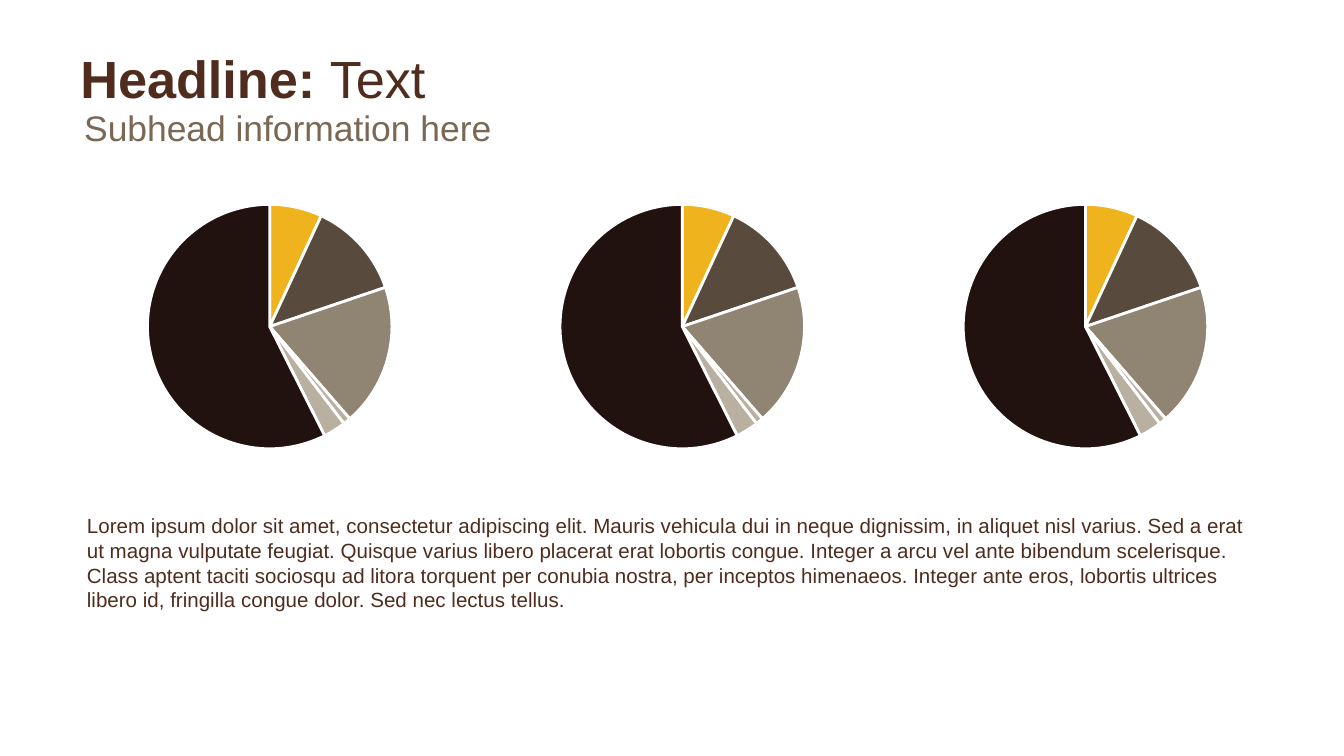
from lxml.etree import SubElement
from pptx import Presentation
from pptx.chart.data import CategoryChartData
from pptx.dml.color import RGBColor
from pptx.enum.chart import XL_CHART_TYPE
from pptx.enum.text import MSO_ANCHOR
from pptx.oxml.ns import qn
from pptx.util import Pt

COLORS = {
    "brown": "4F2C1D", "taupe": "7A6855", "white": "FFFFFF", "black": "000000",
    "gold": "EFB31D", "umber": "584B3D", "stone": "908472", "sand": "B9B0A1",
    "espresso": "21120F",
}


def rgb(name):
    return RGBColor.from_string(COLORS[name])


def add_text(left, top, width, height, runs, size, color, anchor=MSO_ANCHOR.TOP):
    frame = slide.shapes.add_textbox(Pt(left), Pt(top), Pt(width), Pt(height)).text_frame
    frame.word_wrap = True
    frame.vertical_anchor = anchor
    for text, bold in runs:
        run = frame.paragraphs[0].add_run()
        run.text = text
        run.font.name = "Arial"
        run.font.size = Pt(size)
        run.font.bold = bold
        run.font.color.rgb = rgb(color)
    return frame


prs = Presentation()
prs.slide_width, prs.slide_height = Pt(720), Pt(405)
slide = prs.slides.add_slide(prs.slide_layouts[6])

# Headline and subhead
add_text(36, 8, 648, 67.5, [("Headline: ", True), ("Text", False)], 28, "brown",
         MSO_ANCHOR.MIDDLE)
add_text(38, 53.3, 253.5, 30, [("Subhead information here", False)], 19, "taupe")

# Three pies with the same shares
shares = CategoryChartData()
shares.categories = ["1", "2", "3", "4", "5", "6"]
shares.add_series("Series 1", (7, 13, 19, 1, 3, 58))
slice_colors = ["gold", "umber", "stone", "sand", "sand", "espresso"]
pie_width, pie_height, diameter = 201, 151, 131

for pie_left in (44, 265, 481):
    pie = slide.shapes.add_chart(XL_CHART_TYPE.PIE, Pt(pie_left), Pt(99.5),
                                 Pt(pie_width), Pt(pie_height), shares).chart
    pie.has_title = False
    pie.has_legend = False
    pie.font.name = "Calibri"
    pie.font.size = Pt(12)
    pie.font.color.rgb = rgb("black")
    plot = pie.plots[0]
    plot.vary_by_categories = True
    for index, color in enumerate(slice_colors):
        pie_slice = plot.series[0].points[index].format
        pie_slice.fill.solid()
        pie_slice.fill.fore_color.rgb = rgb(color)
        pie_slice.line.color.rgb = rgb("white")
        pie_slice.line.width = Pt(1.5)

    # Centre the pie at a fixed diameter
    plot_area = pie.element.find(".//" + qn("c:plotArea"))
    layout = plot_area.find(qn("c:layout"))
    if layout is None:
        layout = SubElement(plot_area, qn("c:layout"))
        plot_area.insert(0, layout)
    manual = SubElement(layout, qn("c:manualLayout"))
    width_share, height_share = diameter / pie_width, diameter / pie_height
    for tag, value in (("layoutTarget", "inner"), ("xMode", "edge"), ("yMode", "edge"),
                       ("x", (1 - width_share) / 2), ("y", (1 - height_share) / 2),
                       ("w", width_share), ("h", height_share)):
        SubElement(manual, qn("c:" + tag)).set("val", str(value))

# Body text
body = add_text(39.5, 270, 642.5, 73.5, [(
    "Lorem ipsum dolor sit amet, consectetur adipiscing elit. Mauris vehicula dui in neque "
    "dignissim, in aliquet nisl varius. Sed a erat ut magna vulputate feugiat. Quisque varius "
    "libero placerat erat lobortis congue. Integer a arcu vel ante bibendum scelerisque. Class "
    "aptent taciti sociosqu ad litora torquent per conubia nostra, per inceptos himenaeos. "
    "Integer ante eros, lobortis ultrices libero id, fringilla congue dolor. Sed nec lectus "
    "tellus.", False)], 11, "brown")
body.margin_top = Pt(5)

prs.save("out.pptx")
